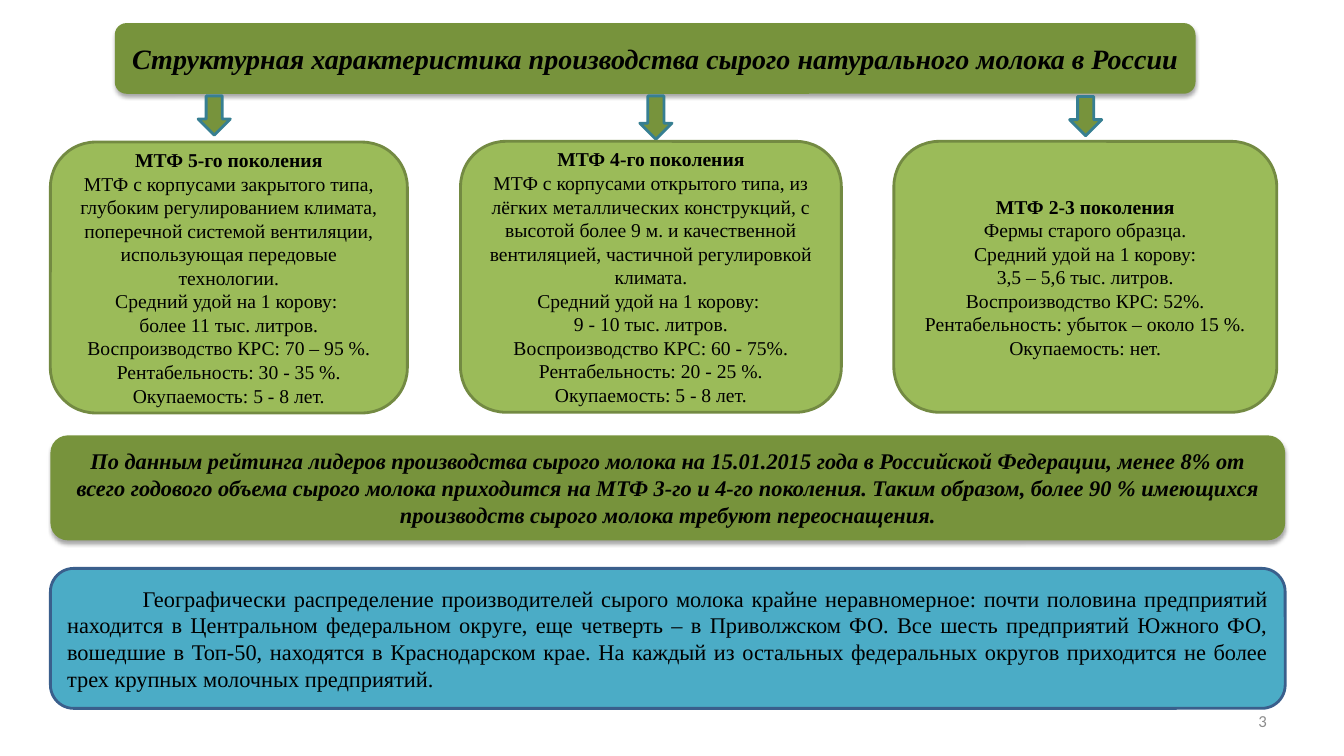
"""Build the slide on the structure of raw milk production in Russia."""
from pptx import Presentation, oxml
from pptx.dml.color import RGBColor
from pptx.enum import shapes, text
from pptx.oxml import ns
from pptx.util import Pt

COLOURS = {
    "banner": "77933C", "card": "9BBB59", "card_line": "738A42",
    "arrow_line": "377F92", "region": "4BACC6", "region_line": "3A5F8C",
    "ink": "000000", "number": "8C8C8C",
}
SERIF = "Times New Roman"
SHADOW = (
    f'<a:outerShdw {ns.nsdecls("a")} blurRad="40000" dist="23000" dir="5400000" rotWithShape="0">'
    '<a:srgbClr val="000000"><a:alpha val="35000"/></a:srgbClr></a:outerShdw>'
)
NUMBER_FIELD = (
    f'<a:fld {ns.nsdecls("a")} id="{{B6F15528-21DE-4FAA-801E-634DDDAF4B2B}}" type="slidenum">'
    '<a:rPr lang="ru-RU" sz="1200"><a:solidFill><a:srgbClr val="' + COLOURS["number"] + '"/></a:solidFill>'
    '<a:latin typeface="Calibri"/></a:rPr><a:t>3</a:t></a:fld>'
)


def add_block(kind, box, fill, line=None):
    """Add a filled shape, outlined if a line colour is given and shadowed if not."""
    block = slide.shapes.add_shape(kind, *map(Pt, box))
    block.shadow.inherit = False
    block.fill.solid()
    block.fill.fore_color.rgb = RGBColor.from_string(COLOURS[fill])
    if line:
        block.line.color.rgb = RGBColor.from_string(COLOURS[line])
        block.line.width = Pt(2)
    elif kind == shapes.MSO_SHAPE.ROUNDED_RECTANGLE:
        block.line.fill.background()
        block._element.spPr.find(ns.qn("a:effectLst")).append(oxml.parse_xml(SHADOW))
    return block


def write(block, lines, size, align=text.PP_ALIGN.CENTER, bold=False, italic=False):
    """Write lines as middle-anchored serif paragraphs."""
    frame = block.text_frame
    frame.word_wrap = True
    frame.vertical_anchor = text.MSO_ANCHOR.MIDDLE
    frame.text = "\n".join(lines)
    for paragraph in frame.paragraphs:
        paragraph.alignment = align
        font = paragraph.font
        font.name, font.size, font.bold, font.italic = SERIF, Pt(size), bold, italic
        font.color.rgb = RGBColor.from_string(COLOURS["ink"])


prs = Presentation()
prs.slide_width, prs.slide_height = Pt(960), Pt(540)
prs.element.set("firstSlideNum", "3")
slide = prs.slides.add_slide(prs.slide_layouts[5])
rounded = shapes.MSO_SHAPE.ROUNDED_RECTANGLE

title_box = (82, 16.5, 772, 50.5)
add_block(rounded, title_box, "banner")
title = slide.shapes.title
title.left, title.top, title.width, title.height = map(Pt, title_box)
write(title, ["Структурная характеристика производства сырого натурального молока в России"],
      20, bold=True, italic=True)
slide.shapes._spTree.append(title._element)

generations = [
    ((36, 101.5, 255, 193.5), (141.5, 68.5, 23, 28), [
        "МТФ 5-го поколения",
        "МТФ с корпусами закрытого типа, глубоким регулированием климата, "
        "поперечной системой вентиляции, использующая передовые технологии.",
        "Средний удой на 1 корову: ",
        "более 11 тыс. литров.",
        "Воспроизводство КРС: 70 – 95 %.",
        "Рентабельность: 30 - 35 %.",
        "Окупаемость: 5 - 8 лет.",
    ]),
    ((329, 101, 272, 193.5), (457, 68.5, 23, 31), [
        "МТФ 4-го поколения",
        "МТФ с корпусами открытого типа, из лёгких металлических конструкций, "
        "с высотой более 9 м. и качественной вентиляцией, частичной регулировкой климата.",
        "Средний удой на 1 корову: ",
        "9 - 10 тыс. литров.",
        "Воспроизводство КРС: 60 - 75%.",
        "Рентабельность: 20 - 25 %.",
        "Окупаемость: 5 - 8 лет.",
    ]),
    ((638.5, 101, 273.5, 193.5), (764, 69, 23, 28), [
        "МТФ 2-3 поколения",
        "Фермы старого образца.",
        "Средний удой на 1 корову:",
        "3,5 – 5,6 тыс. литров.",
        "Воспроизводство КРС: 52%.",
        "Рентабельность: убыток – около 15 %.",
        "Окупаемость: нет.",
    ]),
]
for card_box, arrow_box, facts in generations:
    add_block(shapes.MSO_SHAPE.DOWN_ARROW, arrow_box, "banner", "arrow_line")
    card = add_block(rounded, card_box, "card", "card_line")
    write(card, facts, 14)
    card.text_frame.paragraphs[0].font.bold = True

rating = add_block(rounded, (36, 311, 882, 75), "banner")
write(rating, [
    "По данным рейтинга лидеров производства сырого молока на 15.01.2015 года в Российской "
    "Федерации, менее 8% от всего годового объема сырого молока приходится на МТФ 3-го и 4-го "
    "поколения. Таким образом, более 90 % имеющихся производств сырого молока требуют переоснащения."
], 16, bold=True, italic=True)

regions = add_block(rounded, (36, 406, 882, 100), "region", "region_line")
write(regions, [
    "Географически распределение производителей сырого молока крайне неравномерное: почти половина "
    "предприятий находится в Центральном федеральном округе, еще четверть – в Приволжском ФО. "
    "Все шесть предприятий Южного ФО, вошедшие в Топ-50, находятся в Краснодарском крае. "
    "На каждый из остальных федеральных округов приходится не более трех крупных молочных предприятий."
], 16, text.PP_ALIGN.JUSTIFY)
regions.text_frame.paragraphs[0]._p.pPr.set("indent", str(Pt(54)))

number = slide.shapes.add_textbox(Pt(688), Pt(500.5), Pt(224), Pt(28.5))
number.text_frame.word_wrap = True
number.text_frame.vertical_anchor = text.MSO_ANCHOR.MIDDLE
number_line = number.text_frame.paragraphs[0]
number_line.alignment = text.PP_ALIGN.RIGHT
number_line._p.append(oxml.parse_xml(NUMBER_FIELD))

prs.save("out.pptx")
